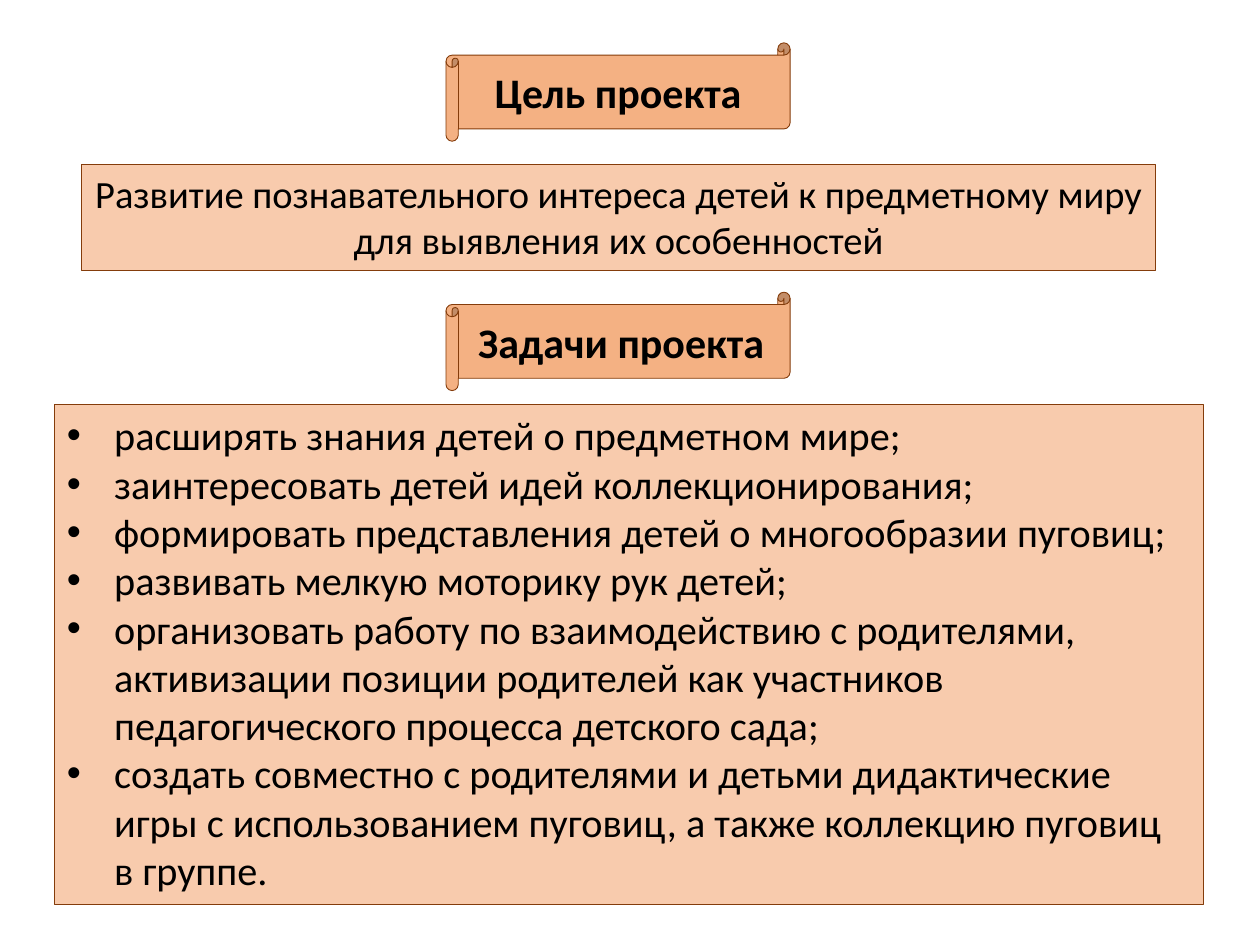
import pptx
import pptx.util
import pptx.dml.color
import pptx.enum.shapes
import pptx.enum.text

Pt = pptx.util.Pt
RGBColor = pptx.dml.color.RGBColor
MSO_SHAPE = pptx.enum.shapes.MSO_SHAPE
PP_ALIGN = pptx.enum.text.PP_ALIGN
MSO_ANCHOR = pptx.enum.text.MSO_ANCHOR
MSO_AUTO_SIZE = pptx.enum.text.MSO_AUTO_SIZE

SCROLL = RGBColor(0xF4, 0xB1, 0x83)
PANEL = RGBColor(0xF8, 0xCB, 0xAD)
BORDER = RGBColor(0x84, 0x3C, 0x0B)
BLACK = RGBColor(0, 0, 0)

TASKS = [
    "расширять знания детей о предметном мире;",
    "заинтересовать детей идей коллекционирования;",
    "формировать представления детей о многообразии пуговиц;",
    "развивать мелкую моторику рук детей;",
    "организовать работу по взаимодействию с родителями, активизации позиции "
    "родителей как участников педагогического процесса детского сада;",
    "создать совместно с родителями и детьми дидактические игры с использованием "
    "пуговиц, а также коллекцию пуговиц в группе.",
]


def paint(s, color):
    s.fill.solid()
    s.fill.fore_color.rgb = color
    s.line.color.rgb = BORDER
    s.line.width = Pt(0.5)


def write(s, lines, size, align, anchor, bold=False):
    tf = s.text_frame
    tf.word_wrap = True
    tf.auto_size = MSO_AUTO_SIZE.NONE
    tf.vertical_anchor = anchor
    tf.text = "\n".join(lines)
    for p in tf.paragraphs:
        p.alignment = align
        p.space_before = Pt(0)
        p.font.name = "Calibri"
        p.font.size = Pt(size)
        p.font.bold = bold
        p.font.color.rgb = BLACK


prs = pptx.Presentation()
prs.slide_width, prs.slide_height = Pt(720), Pt(540)
slide = prs.slides.add_slide(prs.slide_layouts[1])
title, body = slide.shapes.title, slide.placeholders[1]

# Heading scrolls
scrolls = []
for top in (24.5, 167):
    s = slide.shapes.add_shape(MSO_SHAPE.HORIZONTAL_SCROLL,
                               Pt(254.9), Pt(top), Pt(196.6), Pt(56.2))
    s.shadow.inherit = False
    paint(s, SCROLL)
    scrolls.append(s)
goal_scroll, tasks_scroll = scrolls

# Slide title, placed in front of the first scroll
title.left, title.top = goal_scroll.left, goal_scroll.top
title.width, title.height = goal_scroll.width, goal_scroll.height
goal_scroll.element.addnext(title.element)
write(title, ["Цель проекта"], 24, PP_ALIGN.CENTER, MSO_ANCHOR.MIDDLE, bold=True)

# Second heading
write(tasks_scroll, ["Задачи проекта"], 24, PP_ALIGN.CENTER, MSO_ANCHOR.MIDDLE, bold=True)

# Goal panel
goal = slide.shapes.add_shape(MSO_SHAPE.RECTANGLE, Pt(46.8), Pt(93.8), Pt(613.4), Pt(60.6))
goal.shadow.inherit = False
paint(goal, PANEL)
write(goal, ["Развитие познавательного интереса детей к предметному миру "
             "для выявления их особенностей"], 22, PP_ALIGN.CENTER, MSO_ANCHOR.TOP)

# Task list
body.left, body.top, body.width, body.height = Pt(31), Pt(231.1), Pt(656.6), Pt(285.8)
paint(body, PANEL)
write(body, TASKS, 23, PP_ALIGN.LEFT, MSO_ANCHOR.TOP)
for p in body.text_frame.paragraphs:
    pPr = p._p.get_or_add_pPr()
    pPr.set("marL", str(Pt(27)))
    pPr.set("indent", str(Pt(-27)))

prs.save("out.pptx")
